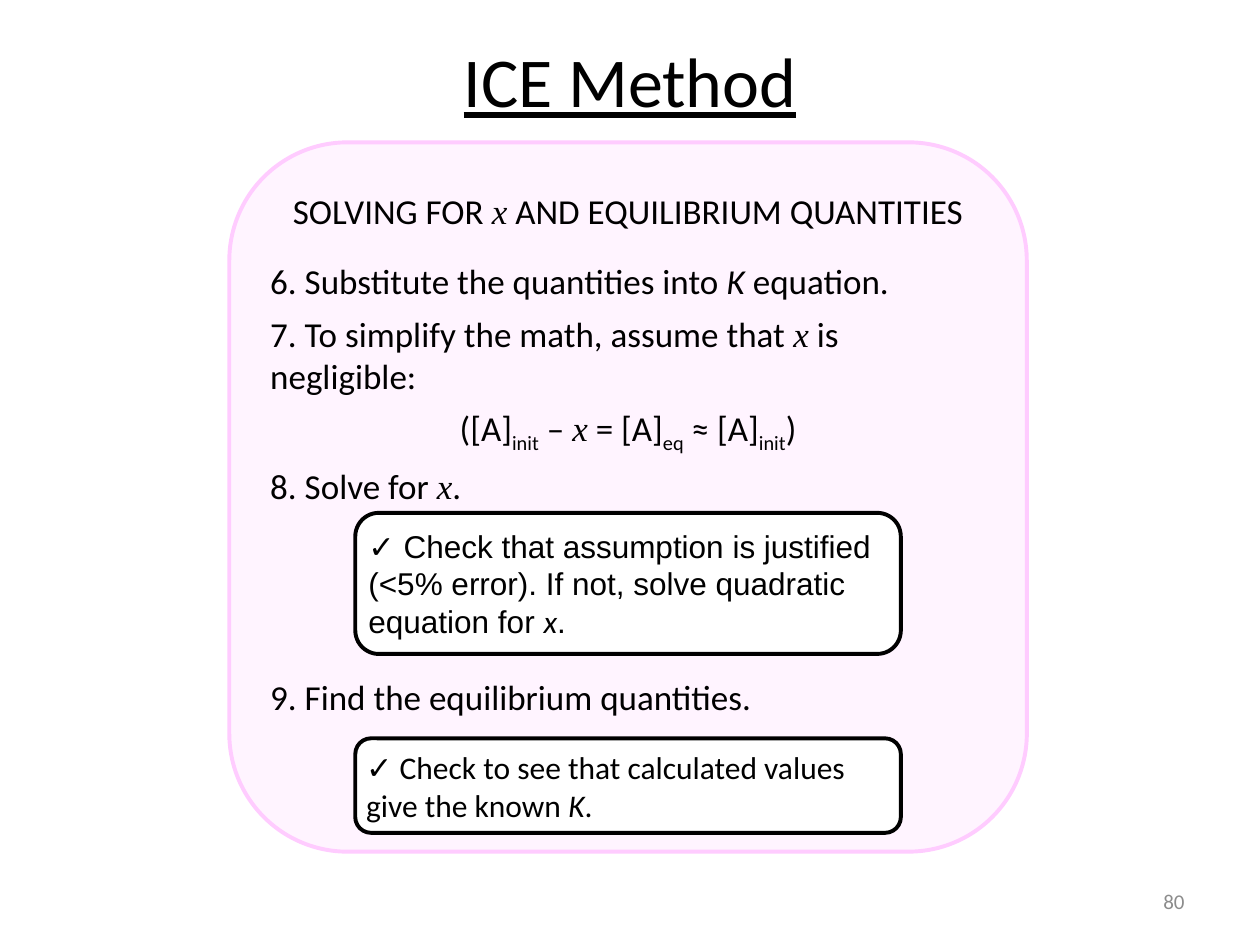
from dataclasses import dataclass

from lxml.etree import SubElement
from pptx import Presentation
from pptx.dml.color import RGBColor
from pptx.enum.shapes import MSO_SHAPE as Shape
from pptx.enum.text import MSO_ANCHOR as Anchor, PP_ALIGN as Align
from pptx.oxml.ns import qn
from pptx.util import Inches, Pt


@dataclass(frozen=True)
class Theme:
    black = RGBColor(0x00, 0x00, 0x00)
    white = RGBColor(0xFF, 0xFF, 0xFF)
    pink = RGBColor(0xFF, 0xCC, 0xFF)
    grey = RGBColor(0x8C, 0x8C, 0x8C)
    title_size = Pt(40)
    step_size = Pt(20)
    check_size = Pt(18)
    number_size = Pt(12)
    outline = Pt(2.25)
    body_font = "Calibri"
    check_font = "Arial"


THEME = Theme()
ITALIC = {"italic": True}
VARIABLE = {"name": "Times New Roman", "italic": True}
SUBSCRIPT = {"baseline": -25000}
X = ("x", VARIABLE)

# Each paragraph: runs, paragraph format, first number of its list (or None)
STEPS = [
    (["SOLVING FOR ", X, " AND EQUILIBRIUM QUANTITIES"],
     {"alignment": Align.CENTER, "space_after": Pt(10)}, None),
    ([" Substitute the quantities into ", ("K ", ITALIC), "equation."],
     {"space_before": Pt(6)}, 6),
    ([" To simplify the math, assume that ", X, " is negligible:"],
     {"space_before": Pt(6)}, 6),
    (["([A]", ("init", SUBSCRIPT), " – ", X, " = [A]", ("eq", SUBSCRIPT),
      " ≈ [A]", ("init", SUBSCRIPT), ")"],
     {"alignment": Align.CENTER, "space_before": Pt(6)}, None),
    ([" Solve for ", X, "."], {"space_before": Pt(6)}, 8),
    # The wide gap leaves room for the first check box
    ([" Find the equilibrium quantities."], {"space_before": Pt(96)}, 8),
]


def apply_format(target, values):
    for name, value in values.items():
        setattr(target, name, value)


def add_runs(paragraph, runs, base_font, color):
    """Add runs given as plain text or as (text, differences from base_font)."""
    for item in runs:
        text, changes = (item, {}) if isinstance(item, str) else item
        run = paragraph.add_run()
        run.text = text
        values = {**base_font, **changes}
        baseline = values.pop("baseline", None)
        apply_format(run.font, values)
        run.font.color.rgb = color
        if baseline is not None:
            run.font._element.set("baseline", str(baseline))


def number_from(paragraph, start):
    props = paragraph._p.get_or_add_pPr()
    props.set("marL", "0")
    props.set("indent", "0")
    SubElement(props, qn("a:buAutoNum"), type="arabicPeriod", startAt=str(start))


def fill_text(frame, paragraphs, base_font, color=THEME.black, **frame_format):
    apply_format(frame, {"word_wrap": True, "vertical_anchor": Anchor.MIDDLE,
                         **frame_format})
    for index, (runs, layout, start) in enumerate(paragraphs):
        paragraph = frame.paragraphs[0] if index == 0 else frame.add_paragraph()
        apply_format(paragraph, {"alignment": Align.LEFT, **layout})
        if start:
            number_from(paragraph, start)
        add_runs(paragraph, runs, base_font, color)


def add_panel(slide, box, fill, line, opacity=None):
    """Add a rounded rectangle with narrow text margins."""
    panel = slide.shapes.add_shape(Shape.ROUNDED_RECTANGLE, *map(Inches, box))
    panel.shadow.inherit = False
    panel.fill.solid()
    panel.fill.fore_color.rgb = fill
    panel.line.color.rgb = line
    panel.line.width = THEME.outline
    if opacity is not None:
        color = panel._element.spPr.find(qn("a:solidFill"))[0]
        SubElement(color, qn("a:alpha"), val=str(opacity * 1000))
    sides = ("left", "top", "right", "bottom")
    apply_format(panel.text_frame,
                 {f"margin_{side}": Inches(0.05) for side in sides})
    return panel


def add_check(slide, top, height, runs, font):
    panel = add_panel(slide, (2.82, top, 4.33, height), THEME.white, THEME.black)
    spacing = {"space_before": Pt(10), "space_after": Pt(10)}
    fill_text(panel.text_frame, [(runs, spacing, None)],
              {"name": font, "size": THEME.check_size})


def add_label(slide, box, text, alignment, font, color):
    label = slide.shapes.add_textbox(*map(Inches, box))
    fill_text(label.text_frame, [([text], {"alignment": alignment}, None)],
              {"name": THEME.body_font, **font}, color)


def main():
    prs = Presentation()
    prs.slide_width, prs.slide_height = Inches(10), Inches(7.5)
    slide = prs.slides.add_slide(prs.slide_layouts[6])

    steps = add_panel(slide, (1.82, 1.13, 6.33, 5.63), THEME.pink, THEME.pink,
                      opacity=20)
    fill_text(steps.text_frame, STEPS,
              {"name": THEME.body_font, "size": THEME.step_size},
              vertical_anchor=Anchor.TOP, margin_top=Inches(0.1))

    add_check(slide, 5.86, 0.75,
              ["✓ Check to see that calculated values give the known ",
               ("K", ITALIC), "."], THEME.body_font)
    add_check(slide, 4.07, 1.12,
              ["✓ Check that assumption is justified (<5% error). "
               "If not, solve quadratic equation for ",
               ("x", {"name": THEME.body_font, "italic": True}), "."],
              THEME.check_font)

    add_label(slide, (0.5, 0.01, 9, 1.25), "ICE Method", Align.CENTER,
              {"size": THEME.title_size, "underline": True}, THEME.black)
    add_label(slide, (7.17, 6.95, 2.33, 0.4), "80", Align.RIGHT,
              {"size": THEME.number_size}, THEME.grey)

    prs.save("out.pptx")


if __name__ == "__main__":
    main()
